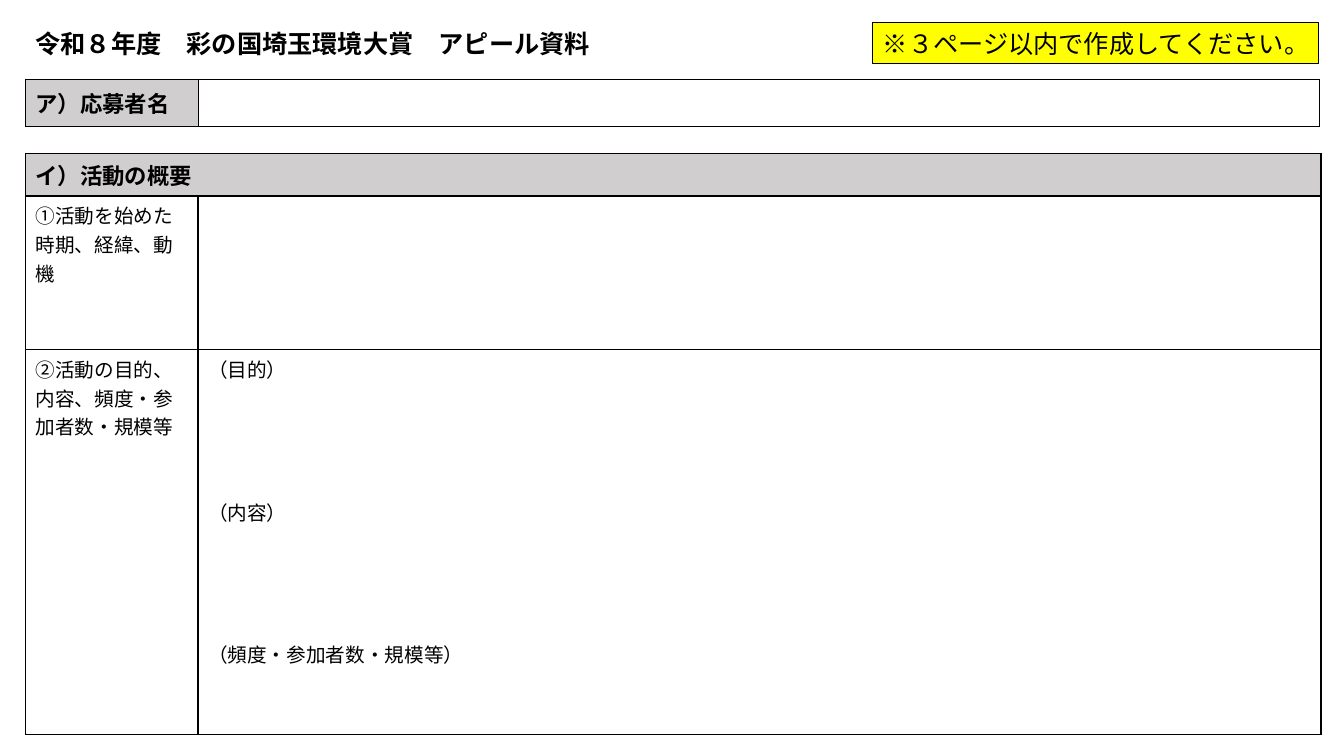
from dataclasses import dataclass

from lxml.etree import SubElement
from pptx import Presentation
from pptx.dml.color import RGBColor
from pptx.enum.shapes import MSO_SHAPE
from pptx.enum.text import MSO_ANCHOR, MSO_AUTO_SIZE, PP_ALIGN
from pptx.oxml.ns import qn
from pptx.util import Cm, Pt


@dataclass(frozen=True)
class Theme:
    face: str = "Noto Sans CJK JP"
    ink: RGBColor = RGBColor(0, 0, 0)
    gray: RGBColor = RGBColor(0xD0, 0xCE, 0xCE)
    yellow: RGBColor = RGBColor(0xFF, 0xFF, 0)
    large: int = 18
    head: int = 16
    body: int = 14


theme = Theme()


def write(frame, text, size=theme.body, bold=False, gap=0, anchor=MSO_ANCHOR.TOP):
    """Fill a frame with one paragraph per line, gap points apart."""
    frame.word_wrap = True
    frame.vertical_anchor = anchor
    for i, line in enumerate(text.split("\n")):
        para = frame.paragraphs[0] if i == 0 else frame.add_paragraph()
        para.alignment = PP_ALIGN.LEFT
        if i and gap:
            para.space_before = Pt(gap)
        run = para.add_run()
        run.text = line
        font = run.font
        font.size, font.bold, font.name = Pt(size), bold, theme.face
        font.color.rgb = theme.ink
        SubElement(font._element, qn("a:ea"), typeface=theme.face)


def grid(top, cols, rows):
    """Add a plain table with thin borders on every cell."""
    table = slide.shapes.add_table(
        len(rows), len(cols), left, Cm(top), Cm(sum(cols)), Cm(sum(rows))).table
    table.first_row = table.horz_banding = False
    for col, width in zip(table.columns, cols):
        col.width = Cm(width)
    for row, height in zip(table.rows, rows):
        row.height = Cm(height)
    for cell in table.iter_cells():
        props = cell._tc.get_or_add_tcPr()
        for side in ("lnL", "lnR", "lnT", "lnB"):
            edge = SubElement(props, qn(f"a:{side}"), w=str(Pt(1)))
            fill = SubElement(edge, qn("a:solidFill"))
            SubElement(fill, qn("a:srgbClr"), val=str(theme.ink))
        cell.fill.background()
    return table


# Slide
deck = Presentation()
deck.slide_width, deck.slide_height = Cm(33.87), Cm(19.05)
slide = deck.slides.add_slide(deck.slide_layouts[5])
left, top, height = Cm(0.64), Cm(0.58), Cm(1.03)

# Title
title = slide.shapes.title
title.left, title.top, title.width, title.height = left, top, Cm(21.87), height
title.text_frame.auto_size = MSO_AUTO_SIZE.NONE
write(title.text_frame, "令和８年度　彩の国埼玉環境大賞　アピール資料",
      size=theme.large, bold=True, anchor=MSO_ANCHOR.MIDDLE)

# Page limit note
note = slide.shapes.add_shape(MSO_SHAPE.RECTANGLE, Cm(22), top, Cm(11.23), height)
note.shadow.inherit = False
note.fill.solid()
note.fill.fore_color.rgb = theme.yellow
note.line.color.rgb = theme.ink
note.line.width = Pt(0.75)
write(note.text_frame, "※３ページ以内で作成してください。",
      size=theme.large, anchor=MSO_ANCHOR.MIDDLE)

# Tables: applicant name and outline of activities
name = grid(2, [4.37, 28.24], [1.19])
plan = grid(3.87, [4.35, 28.3], [1.06, 3.87, 9.7])
plan.cell(0, 0).merge(plan.cell(0, 1))

# Gray headings
for table, text in ((name, "ア）応募者名"), (plan, "イ）活動の概要")):
    cell = table.cell(0, 0)
    cell.fill.solid()
    cell.fill.fore_color.rgb = theme.gray
    cell.vertical_anchor = MSO_ANCHOR.MIDDLE
    write(cell.text_frame, text, size=theme.head, bold=True, anchor=MSO_ANCHOR.MIDDLE)

# Questions and answer prompts
write(plan.cell(1, 0).text_frame, "①活動を始めた時期、経緯、動機")
write(plan.cell(2, 0).text_frame, "②活動の目的、内容、頻度・参加者数・規模等")
write(plan.cell(2, 1).text_frame, "（目的）\n（内容）\n（頻度・参加者数・規模等）", gap=81.5)

deck.save("out.pptx")
